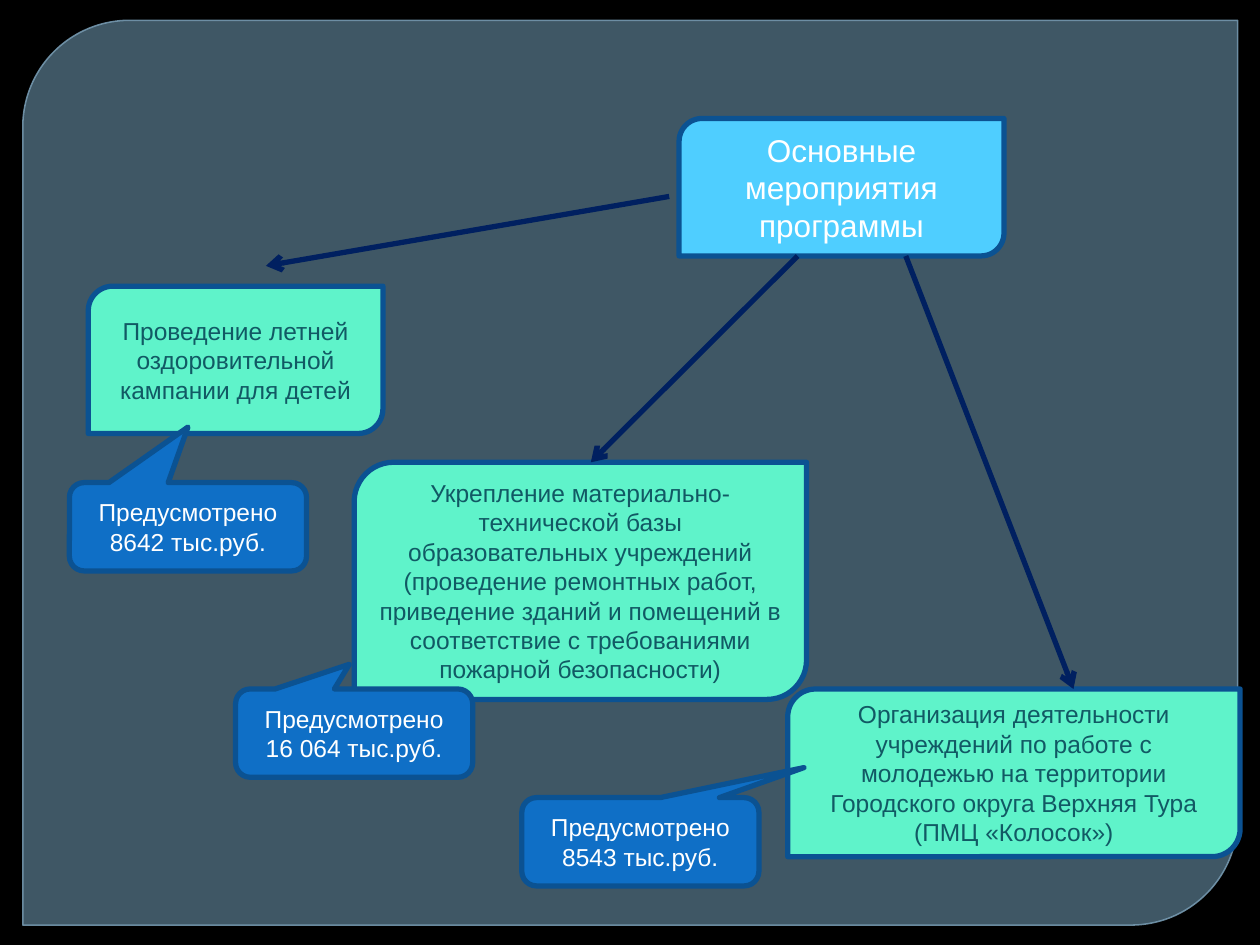
from collections import namedtuple

from pptx import Presentation
from pptx import util as u
from pptx.dml import color
from pptx.enum import shapes, text
from pptx.oxml import ns
from lxml import etree

HUES = {
    "back": "000000", "panel": "61869C", "rim": "779BB2",
    "root": "4FCEFF", "task": "5FF3CA", "sum": "0F6FC6",
    "edge": "0B5292", "arrow": "002060", "light": "FFFFFF", "dark": "115964",
}
KIND = shapes.MSO_SHAPE
Box = namedtuple("Box", "x y w h")

ROOT = Box(13.69, 2.39, 6.55, 2.77)
SUM_SIZE = (4.78, 1.78)
# Box, wording, arrow start from the root, arrow tip and sum box from the
# task corner, sum, callout tip
TASKS = [
    (Box(1.78, 5.77, 5.94, 2.97),
     "Проведение летней оздоровительной кампании для детей",
     (-0.2, 1.57), (3.58, -0.41), (-0.38, 3.96), "8642", (0, -1.13)),
    (Box(15.88, 13.89, 9.12, 3.38),
     "Организация деятельности учреждений по работе с молодежью на "
     "территории Городского округа Верхняя Тура (ПМЦ «Колосок»)",
     (4.57, 2.77), (5.76, 0), (-5.36, 2.19), "8543", (0.69, -0.84)),
    (Box(7.14, 9.32, 9.12, 4.78),
     "Укрепление материально-технической базы образовательных учреждений "
     "(проведение ремонтных работ, приведение зданий и помещений в "
     "соответствие с требованиями пожарной безопасности)",
     (2.39, 2.77), (4.77, 0), (-2.39, 4.57), "16 064", (-0.02, -0.78)),
]


def hue(name):
    return color.RGBColor.from_string(HUES[name])


def fade(paint, share):
    """Make the solid fill inside paint partly opaque, in percent."""
    tone = paint.find(".//" + ns.qn("a:srgbClr"))
    etree.SubElement(tone, ns.qn("a:alpha"), val=str(share * 1000))


def add_box(slide, kind, box, fill, edge="edge", width=3):
    shape = slide.shapes.add_shape(kind, *map(u.Cm, box))
    shape.shadow.inherit = False
    shape.fill.solid()
    shape.fill.fore_color.rgb = hue(fill)
    shape.line.color.rgb = hue(edge)
    shape.line.width = u.Pt(width)
    return shape


def write(shape, words, size, ink):
    frame = shape.text_frame
    frame.word_wrap = True
    frame.vertical_anchor = text.MSO_ANCHOR.MIDDLE
    frame.text = words
    para = frame.paragraphs[0]
    para.alignment = text.PP_ALIGN.CENTER
    font = para.runs[0].font
    font.name = "Arial"
    font.size = u.Pt(size)
    font.color.rgb = hue(ink)


def add_panel(slide, box):
    panel = add_box(slide, KIND.ROUND_2_DIAG_RECTANGLE, box,
                    "panel", "rim", 0.87)
    panel.adjustments[0] = 0.118
    props = panel.element.spPr
    fade(props.find(ns.qn("a:solidFill")), 65)
    fade(props.find(ns.qn("a:ln")), 88)


def add_node(slide, box, words, fill, size, ink):
    node = add_box(slide, KIND.ROUND_2_DIAG_RECTANGLE, box, fill)
    write(node, words, size, ink)


def add_arrow(slide, start, end):
    line = slide.shapes.add_connector(
        shapes.MSO_CONNECTOR.STRAIGHT, *map(u.Cm, (*start, *end)))
    line.line.color.rgb = hue("arrow")
    line.line.width = u.Pt(3)
    props = line.element.spPr
    etree.SubElement(props.find(ns.qn("a:ln")), ns.qn("a:tailEnd"),
                     type="arrow")
    etree.SubElement(props, ns.qn("a:effectLst"))


def add_sum(slide, box, value, tip):
    call = add_box(slide, KIND.ROUNDED_RECTANGULAR_CALLOUT, box, "sum")
    call.adjustments[0], call.adjustments[1] = tip
    write(call, f"Предусмотрено {value} тыс.руб.", 14, "light")


def add_task(slide, box, words, start, tip, shift, value, point):
    """Place a task with its arrow from the root and its sum callout."""
    add_node(slide, box, words, "task", 14, "dark")
    add_arrow(slide, (ROOT.x + start[0], ROOT.y + start[1]),
              (box.x + tip[0], box.y + tip[1]))
    add_sum(slide, Box(box.x + shift[0], box.y + shift[1], *SUM_SIZE),
            value, point)


def main():
    deck = Presentation()
    deck.slide_width, deck.slide_height = u.Cm(25.4), u.Cm(19.05)
    slide = deck.slides.add_slide(deck.slide_layouts[6])
    back = slide.background.fill
    back.solid()
    back.fore_color.rgb = hue("back")
    add_panel(slide, Box(0.46, 0.41, 24.49, 18.24))
    add_node(slide, ROOT, "Основные мероприятия программы",
             "root", 18, "light")
    for task in TASKS:
        add_task(slide, *task)
    deck.save("out.pptx")


if __name__ == "__main__":
    main()
